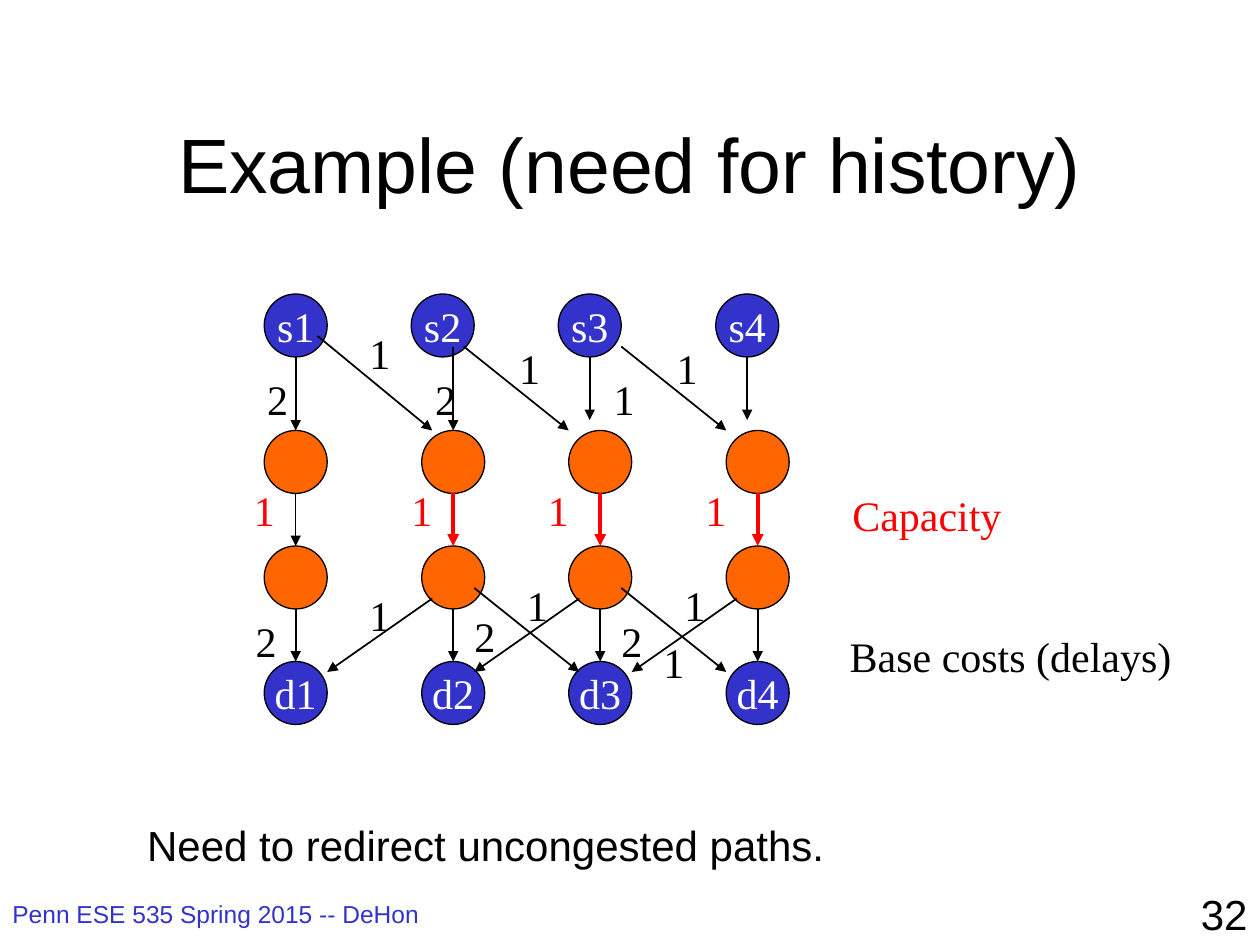
from dataclasses import dataclass

from pptx import Presentation
from pptx.dml.color import RGBColor
from pptx.enum import shapes, text
from pptx.oxml import ns, xmlchemy
from pptx.util import Pt


@dataclass(frozen=True)
class Theme:
    sans: str = "Arial"
    serif: str = "Times New Roman"
    black: str = "000000"
    white: str = "FFFFFF"
    red: str = "FF0000"
    blue: str = "3333CC"
    orange: str = "FF6600"
    title_size: int = 44
    text_size: int = 24
    footer_size: int = 14


class Deck:
    """Holds the theme and the current slide; all lengths are in points."""

    def __init__(self, prs, theme):
        self.theme = theme
        self.s = prs.slides.add_slide(prs.slide_layouts[5])

    def set_text(self, tf, words, color, font=None, size=None, align=None):
        tf.text = words
        p = tf.paragraphs[0]
        p.alignment = align
        f = p.runs[0].font
        f.name = font or self.theme.serif
        f.size = Pt(size or self.theme.text_size)
        f.color.rgb = RGBColor.from_string(color)

    def title(self, words, x, y, w, h):
        sp = self.s.shapes.title
        sp.left, sp.top, sp.width, sp.height = Pt(x), Pt(y), Pt(w), Pt(h)
        tf = sp.text_frame
        tf.vertical_anchor = text.MSO_ANCHOR.MIDDLE
        self.set_text(tf, words, self.theme.black, self.theme.sans,
                      self.theme.title_size, text.PP_ALIGN.CENTER)

    def label(self, words, x, y, w=26.5, h=36, color=None, wrap=False, **style):
        tf = self.s.shapes.add_textbox(Pt(x), Pt(y), Pt(w), Pt(h)).text_frame
        tf.word_wrap = wrap
        self.set_text(tf, words, color or self.theme.black, **style)

    def node(self, x, y, size, fill, words=""):
        sp = self.s.shapes.add_shape(shapes.MSO_SHAPE.OVAL, Pt(x), Pt(y), Pt(size), Pt(size))
        sp.shadow.inherit = False
        sp.fill.solid()
        sp.fill.fore_color.rgb = RGBColor.from_string(fill)
        sp.line.color.rgb = RGBColor.from_string(self.theme.black)
        sp.line.width = Pt(0.75)
        if words:
            tf = sp.text_frame
            tf.word_wrap = False
            tf.vertical_anchor = text.MSO_ANCHOR.MIDDLE
            self.set_text(tf, words, self.theme.white, align=text.PP_ALIGN.CENTER)

    def arrow(self, x1, y1, x2, y2, color=None, width=1):
        sp = self.s.shapes.add_connector(shapes.MSO_CONNECTOR.STRAIGHT,
                                         Pt(x1), Pt(y1), Pt(x2), Pt(y2))
        sp.line.color.rgb = RGBColor.from_string(color or self.theme.black)
        sp.line.width = Pt(width)
        sp_pr = sp._element.find(ns.qn("p:spPr"))
        head = xmlchemy.OxmlElement("a:tailEnd")
        head.set("type", "triangle")
        sp_pr.find(ns.qn("a:ln")).append(head)
        sp_pr.append(xmlchemy.OxmlElement("a:effectLst"))


def draw_network(deck):
    t = deck.theme
    size = 36
    source_y, entry_y, exit_y, sink_y = 168, 246, 312, 378
    sources = [151, 235, 319, 409]
    columns = [151, 241, 325, 415]

    for i, (source_x, x) in enumerate(zip(sources, columns), 1):
        deck.node(source_x, source_y, size, t.blue, f"s{i}")
        deck.node(x, entry_y, size, t.orange)
        deck.node(x, exit_y, size, t.orange)
        deck.node(x, sink_y, size, t.blue, f"d{i}")
        mid = x + size / 2
        congested = i > 1
        deck.arrow(mid, entry_y + size, mid, exit_y,
                   t.red if congested else t.black, 2.25 if congested else 0.75)
        deck.arrow(mid, exit_y + size, mid, sink_y)

    for x, top, bottom in [(169, 204, 246), (259, 198, 246), (337, 204, 240), (427, 204, 240)]:
        deck.arrow(x, top, x, bottom)
    for x, y, target in [(181.5, 192, 247), (265, 198, 325), (355, 198, 415)]:
        deck.arrow(x, y, target, entry_y)
    for x in columns[1:]:
        deck.arrow(x + 6, 342, x - 54, 384)
    for x in columns[1:3]:
        deck.arrow(x + 30, 336, x + 90, 384)

    for x in (138, 228, 306, 396):
        deck.label("1", x, 273.5, color=t.red)
    costs = {
        "1": [(204, 183.5), (289.5, 192), (379.5, 192), (343.5, 210),
              (204, 333.5), (294, 327.5), (384, 327.5), (372, 360)],
        "2": [(145.5, 210), (241.5, 210), (139, 348), (264, 345.5), (348, 348)],
    }
    for cost, places in costs.items():
        for x, y in places:
            deck.label(cost, x, y)


def main():
    prs = Presentation()
    prs.slide_width, prs.slide_height = Pt(720), Pt(540)
    t = Theme()
    deck = Deck(prs, t)
    deck.title("Example (need for history)", 54, 48, 612, 90)
    draw_network(deck)
    deck.label("Capacity", 480, 276, 99.5, color=t.red)
    deck.label("Base costs (delays)", 478.5, 357, 199)
    deck.label("Need to redirect uncongested paths.", 77, 465, 405.5, font=t.sans)
    deck.label("Penn ESE 535 Spring 2015 -- DeHon", 0, 510, 276, 30, color=t.blue,
               wrap=True, font=t.sans, size=t.footer_size)
    deck.label("32", 570, 504, 150, wrap=True, font=t.sans, align=text.PP_ALIGN.RIGHT)
    prs.save("out.pptx")


if __name__ == "__main__":
    main()
